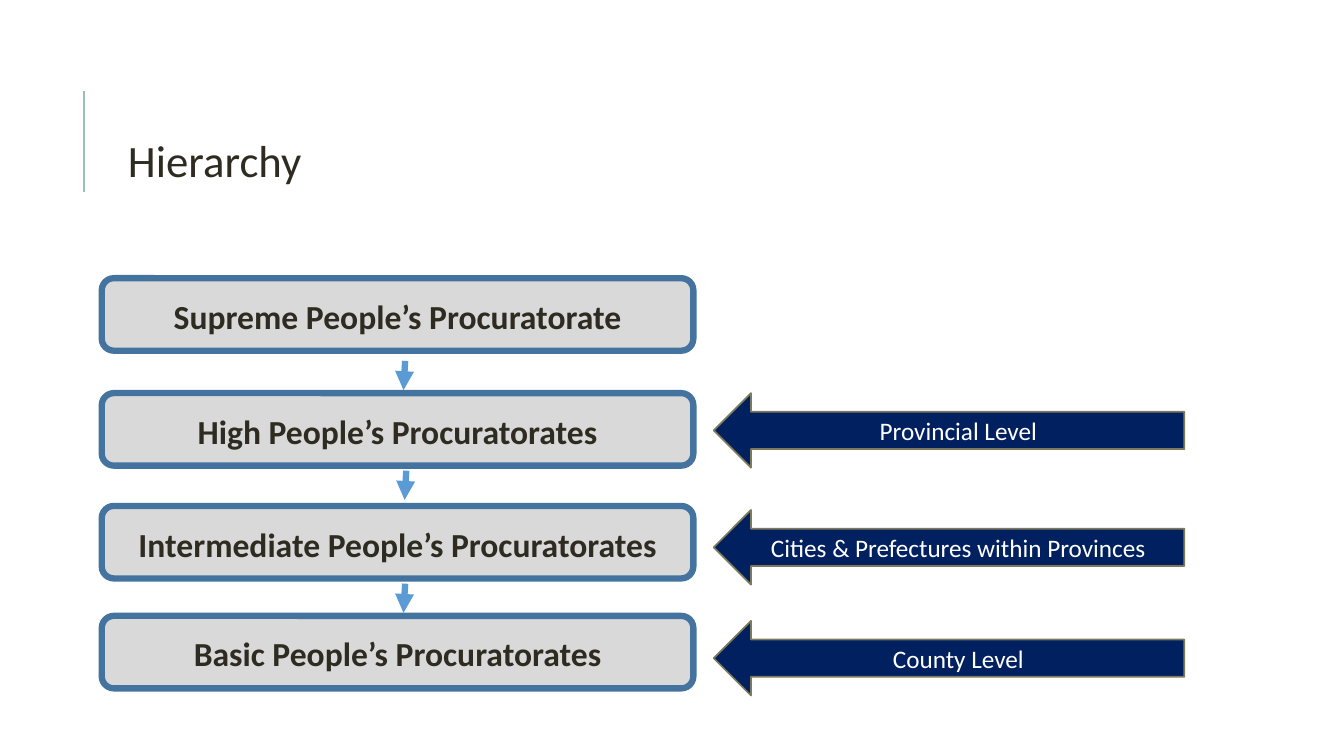
"""Build the slide showing the hierarchy of procuratorates."""
from lxml import etree
from pptx import Presentation
from pptx.dml.color import RGBColor
from pptx.enum.shapes import MSO_CONNECTOR, MSO_SHAPE
from pptx.enum.text import MSO_ANCHOR, MSO_AUTO_SIZE, PP_ALIGN
from pptx.oxml.ns import qn
from pptx.util import Pt

TITLE = "Hierarchy"
OFFICES = [
    ("Supreme People’s Procuratorate", 198.7),
    ("High People’s Procuratorates", 280.8),
    ("Intermediate People’s Procuratorates", 361.4),
    ("Basic People’s Procuratorates", 439.9),
]
LEVELS = [
    ("Provincial Level", 280.8),
    ("Cities & Prefectures within Provinces", 364.3),
    ("County Level", 443.5),
]
STEPS = [(289.4, 257.8), (290.2, 336.2), (289.4, 416.9)]
STEP_DX, STEP_DY = -1.2, 20.9
OFFICE_X, OFFICE_W, OFFICE_H = 72.7, 422.6, 51.8
LEVEL_X, LEVEL_W, LEVEL_H = 509.8, 336.2, 53.3

COLORS = {
    "ink": "2E2B21", "white": "FFFFFF", "rule": "9CBEBD",
    "office": "D9D9D9", "office_line": "43739E", "step": "5B9BD5",
    "level": "002060", "level_line": "7D7A5C",
}
TITLE_FONT = {"name": "Calibri", "size": Pt(32), "bold": False}
OFFICE_FONT = {"name": "Calibri", "size": Pt(24), "bold": True}
LEVEL_FONT = {"name": "Calibri", "size": Pt(18), "bold": False}
TITLE_PARA = {"alignment": PP_ALIGN.LEFT, "line_spacing": 0.9, "space_before": Pt(0)}
OFFICE_PARA = {"alignment": PP_ALIGN.CENTER, "line_spacing": 1.07, "space_after": Pt(8)}
LEVEL_PARA = {"alignment": PP_ALIGN.CENTER}
TITLE_FRAME = {
    "margin_left": Pt(10.8), "margin_right": Pt(3.6), "margin_top": Pt(3.6),
    "margin_bottom": Pt(3.6), "vertical_anchor": MSO_ANCHOR.TOP,
    "word_wrap": True, "auto_size": MSO_AUTO_SIZE.NONE,
}
SHAPE_FRAME = {"vertical_anchor": MSO_ANCHOR.MIDDLE, "word_wrap": True}


def rgb(key):
    return RGBColor.from_string(COLORS[key])


def apply(target, values):
    for name, value in values.items():
        setattr(target, name, value)


def write(sp, text, color, frame, para, font):
    tf = sp.text_frame
    apply(tf, frame)
    p = tf.paragraphs[0]
    apply(p, para)
    r = p.add_run()
    r.text = text
    apply(r.font, font)
    r.font.color.rgb = rgb(color)


def add_block(s, kind, box, fill, line, width):
    sp = s.shapes.add_shape(kind, *map(Pt, box))
    sp.shadow.inherit = False
    sp.fill.solid()
    sp.fill.fore_color.rgb = rgb(fill)
    sp.line.color.rgb = rgb(line)
    sp.line.width = Pt(width)
    return sp


def add_line(s, ends, color, width, arrow=False):
    cx = s.shapes.add_connector(MSO_CONNECTOR.STRAIGHT, *map(Pt, ends))
    cx.line.color.rgb = rgb(color)
    cx.line.width = Pt(width)
    if arrow:
        etree.SubElement(cx.line._get_or_add_ln(), qn("a:tailEnd"), type="triangle")
    etree.SubElement(cx._element.spPr, qn("a:effectLst"))


def main():
    prs = Presentation()
    prs.slide_width, prs.slide_height = Pt(960), Pt(540)
    s = prs.slides.add_slide(prs.slide_layouts[5])

    add_line(s, (60, 136.8, 60, 64.8), "rule", 1.5)
    title = s.shapes.title
    apply(title, {"left": Pt(80.6), "top": Pt(95.8), "width": Pt(765.4), "height": Pt(48)})
    write(title, TITLE, "ink", TITLE_FRAME, TITLE_PARA, TITLE_FONT)

    for text, y in OFFICES:
        box = (OFFICE_X, y, OFFICE_W, OFFICE_H)
        sp = add_block(s, MSO_SHAPE.ROUNDED_RECTANGLE, box, "office", "office_line", 4.5)
        write(sp, text, "ink", SHAPE_FRAME, OFFICE_PARA, OFFICE_FONT)
    for x, y in STEPS:
        add_line(s, (x, y, x + STEP_DX, y + STEP_DY), "step", 4.5, arrow=True)
    for text, y in LEVELS:
        box = (LEVEL_X, y, LEVEL_W, LEVEL_H)
        sp = add_block(s, MSO_SHAPE.LEFT_ARROW, box, "level", "level_line", 1.25)
        write(sp, text, "white", SHAPE_FRAME, LEVEL_PARA, LEVEL_FONT)

    prs.save("out.pptx")


if __name__ == "__main__":
    main()
